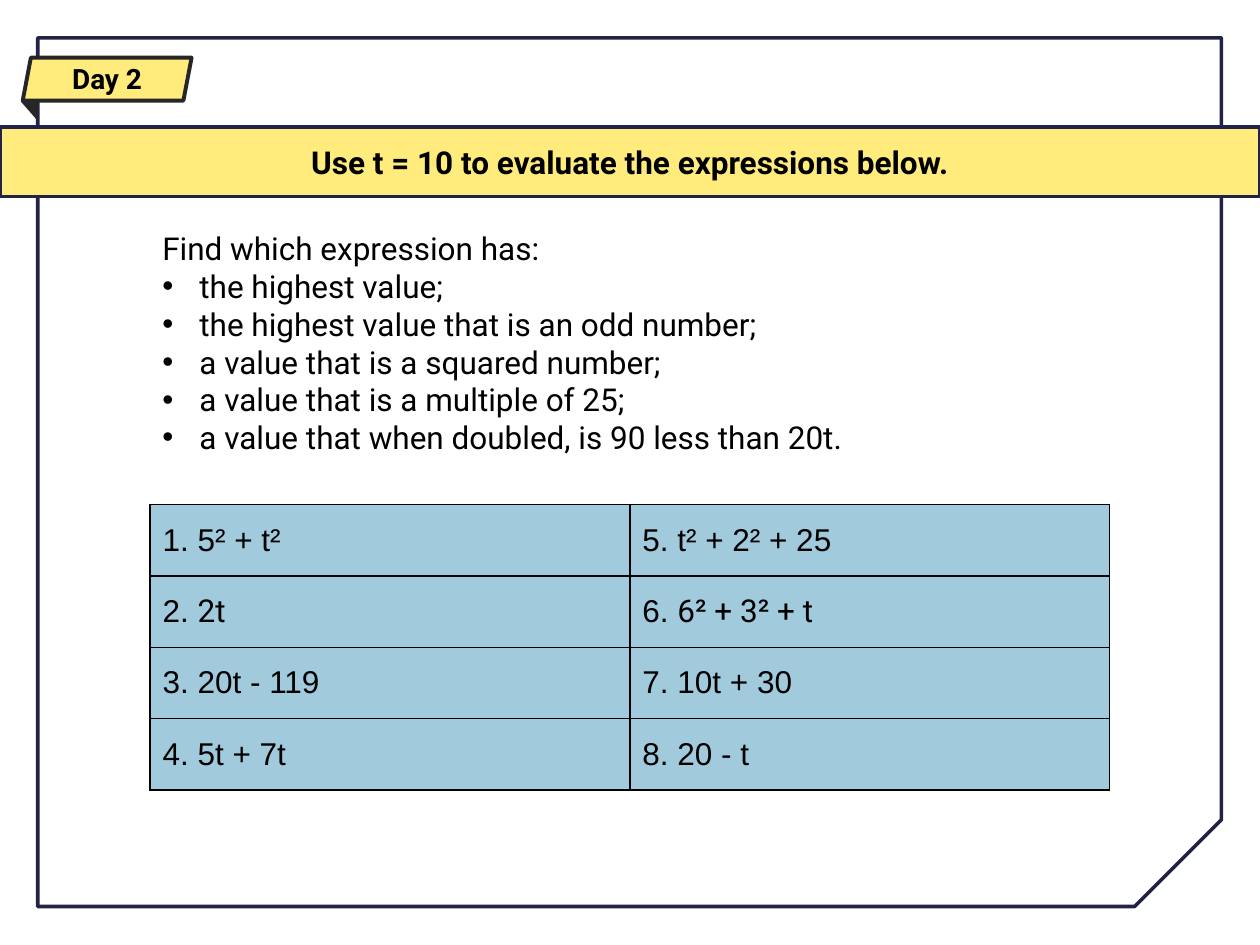
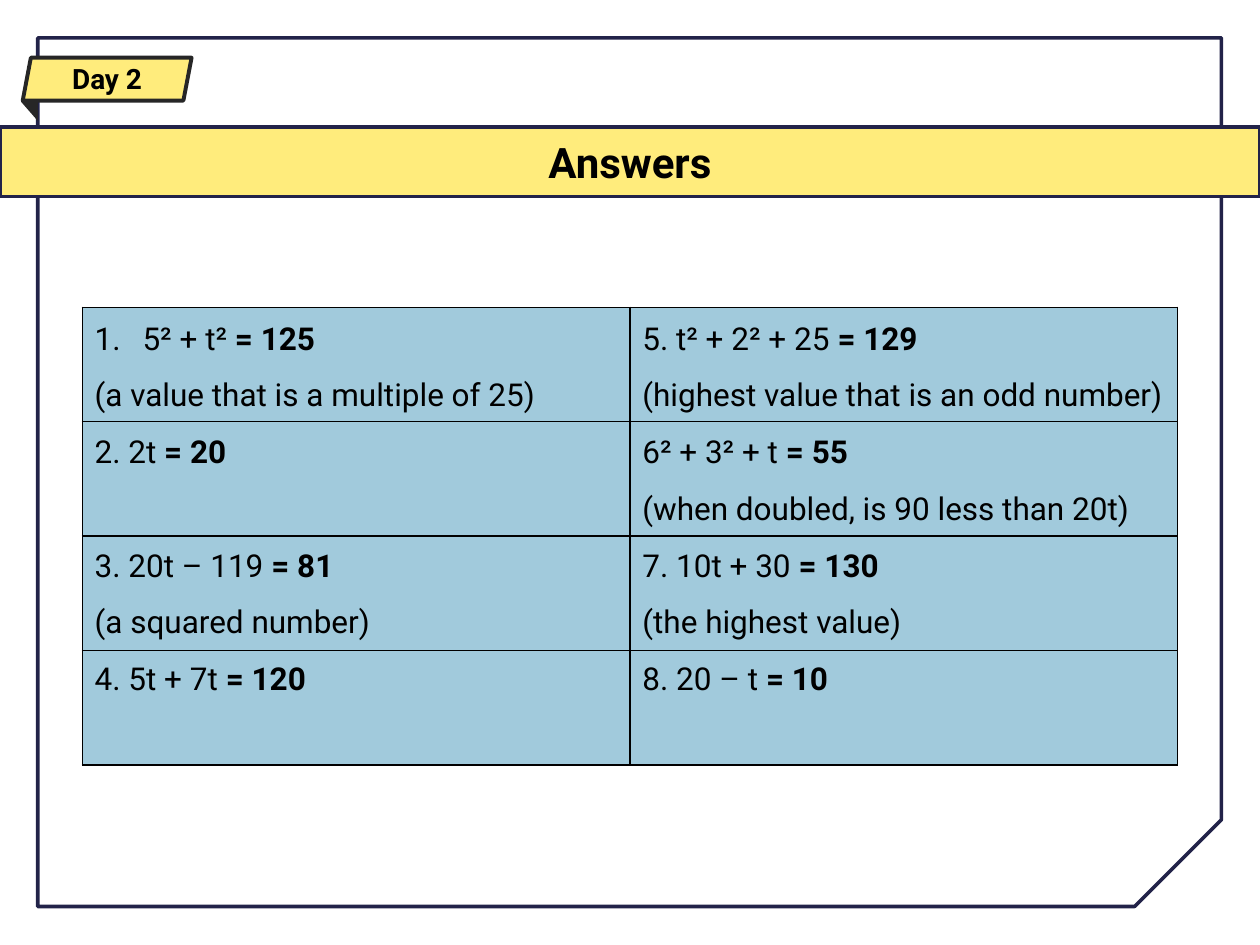
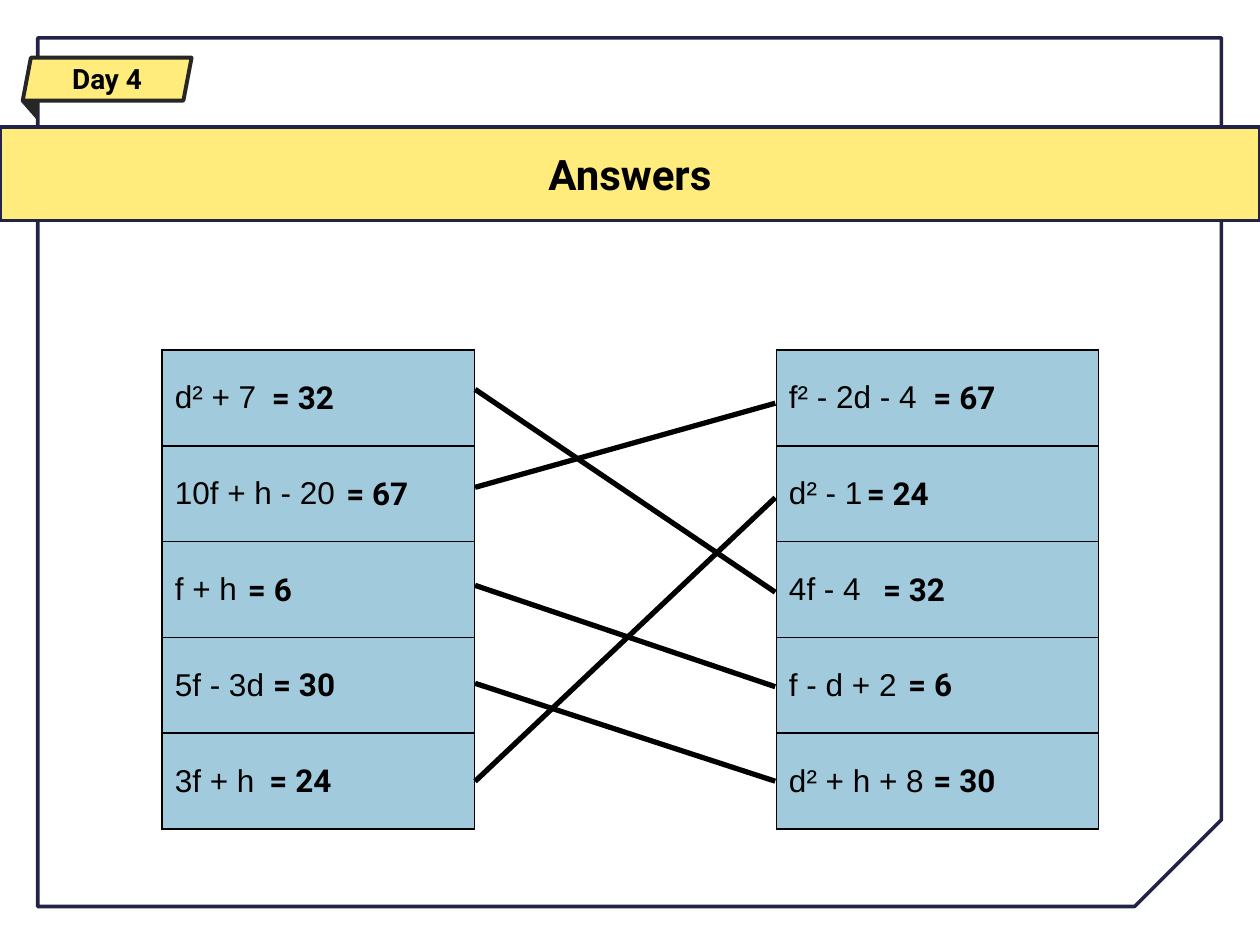
from lxml.etree import SubElement
from pptx import Presentation
from pptx.dml.color import RGBColor
from pptx.enum.shapes import MSO_CONNECTOR, MSO_SHAPE
from pptx.enum.text import MSO_ANCHOR, MSO_AUTO_SIZE, PP_ALIGN
from pptx.oxml.ns import qn
from pptx.util import Pt

# Shared look
BLACK, WHITE, NAVY, CHARCOAL = "000000", "FFFFFF", "222349", "262626"
YELLOW, BLUE = "FFEC7C", "A1CADC"
BODY_FONT, TABLE_FONT = "Roboto", "Arial"
PAGE_WIDTH, PAGE_HEIGHT = 720, 540
BAND_TOP = 72.7
ANSWER_LINE = 32.4

# Slide content
CLUES = [
    "the highest value;",
    "the highest value that is an odd number;",
    "a value that is a squared number;",
    "a value that is a multiple of 25;",
    "a value that when doubled, is 90 less than 20t.",
]
# Each cell is a list of (text, font) parts
EXPRESSIONS = [
    [[("1. 5² + t²", TABLE_FONT)], [("5. t² + 2² + 25", TABLE_FONT)]],
    [[("2. ", TABLE_FONT), ("2t", BODY_FONT)],
     [("6. ", TABLE_FONT), ("6² + 3² + t", BODY_FONT)]],
    [[("3. 20t - 119", TABLE_FONT)], [("7. 10t + 30", TABLE_FONT)]],
    [[("4. 5t + 7t", TABLE_FONT)], [("8. 20 - t", TABLE_FONT)]],
]
# Expression, result, remark
LEFT_ANSWERS = [
    ("5² + t² ", "= 125", "(a value that is a multiple of 25)"),
    ("2. 2t ", "= 20", None),
    ("3. 20t – 119 ", "= 81", "(a squared number)"),
    ("4. 5t + 7t ", "= 120", None),
]
RIGHT_ANSWERS = [
    ("5. t² + 2² + 25 ", "= 129", "(highest value that is an odd number)"),
    ("6² + 3² + t ", "= 55", "(when doubled, is 90 less than 20t)"),
    ("7. 10t + 30 ", "= 130", "(the highest value)"),
    ("8. 20 – t ", "= 10", None),
]
# Expression, value, left edge of the value
LEFT_MATCHES = [
    ("d² + 7", 32, 148.3), ("10f + h - 20", 67, 190.8), ("f + h", 6, 134.6),
    ("5f - 3d", 30, 149), ("3f + h", 24, 146.9),
]
RIGHT_MATCHES = [
    ("f² - 2d - 4", 67, 526.3), ("d² - 1", 24, 488.2), ("4f - 4", 32, 497.5),
    ("f - d + 2", 6, 511.9), ("d² + h + 8", 30, 526.3),
]


def color(hex_code):
    return RGBColor.from_string(hex_code)


def points(*lengths):
    return [Pt(length) for length in lengths]


# Text
def add_span(para, text, size=18, font=BODY_FONT, bold=False, hex_code=BLACK):
    span = para.add_run()
    span.text = text
    span.font.size = Pt(size)
    span.font.name = font
    span.font.bold = bold
    span.font.color.rgb = color(hex_code)
    return span


def add_box(page, *place):
    box = page.shapes.add_textbox(*points(*place))
    box.text_frame.word_wrap = True
    box.text_frame.auto_size = MSO_AUTO_SIZE.SHAPE_TO_FIT_TEXT
    return box.text_frame


def next_para(frame):
    first = frame.paragraphs[0]
    return frame.add_paragraph() if first.runs else first


def set_bullet(para, indent, tag, **attributes):
    properties = para._p.get_or_add_pPr()
    properties.set("marL", str(Pt(indent)))
    properties.set("indent", str(-Pt(indent)))
    SubElement(properties, qn("a:buFont")).set("typeface",
                                               TABLE_FONT if tag == "a:buChar" else BODY_FONT)
    SubElement(properties, qn(tag), attributes)


# Shapes and lines
def add_figure(shapes, kind, place, fill, line=None, width=2, adjust=()):
    figure = shapes.add_shape(kind, *points(*place))
    figure.shadow.inherit = False
    figure.fill.solid()
    figure.fill.fore_color.rgb = color(fill)
    if line:
        figure.line.color.rgb = color(line)
        figure.line.width = Pt(width)
    else:
        figure.line.fill.background()
    for index, value in enumerate(adjust):
        figure.adjustments[index] = value
    return figure


def add_line(page, *ends):
    line = page.shapes.add_connector(MSO_CONNECTOR.STRAIGHT, *points(*ends))
    line.line.color.rgb = color(BLACK)
    line.line.width = Pt(3)
    SubElement(line._element.spPr, qn("a:effectLst"))


# Tables
def style_cell(cell, fill, borders="LRTB"):
    properties = cell._tc.get_or_add_tcPr()
    for side in "LRTB":
        edge = SubElement(properties, qn(f"a:ln{side}"), w=str(Pt(1)))
        if side in borders:
            paint = SubElement(edge, qn("a:solidFill"))
            SubElement(paint, qn("a:srgbClr"), val=BLACK)
        else:
            SubElement(edge, qn("a:noFill"))
    cell.fill.solid()
    cell.fill.fore_color.rgb = color(fill)
    cell.vertical_anchor = MSO_ANCHOR.MIDDLE


def add_grid(page, left, top, widths, row_height, rows):
    """Draw rows of cells; a cell is a list of (text, font) or None for a gap."""
    place = points(left, top, sum(widths), row_height * len(rows))
    table = page.shapes.add_table(len(rows), len(widths), *place).table
    table.first_row = table.horz_banding = False
    for column, width in zip(table.columns, widths):
        column.width = Pt(width)
    for row_index, row in enumerate(rows):
        table.rows[row_index].height = Pt(row_height)
        for column_index, parts in enumerate(row):
            cell = table.cell(row_index, column_index)
            if parts is None:
                style_cell(cell, WHITE, borders="LR")
                continue
            style_cell(cell, BLUE)
            for text, font in parts:
                add_span(cell.text_frame.paragraphs[0], text, font=font)


# Frame, title band and day flag
def add_page(deck, day, title, title_size=24, band_height=39.6):
    page = deck.slides.add_slide(deck.slide_layouts[6])
    frame = add_figure(page.shapes, MSO_SHAPE.SNIP_ROUND_RECTANGLE,
                       (21.6, 21.6, 676.4, 496.4), WHITE, NAVY, adjust=(0, 0.1))
    frame.rotation = 180
    frame._element.spPr.find(qn("a:xfrm")).set("flipH", "1")

    band = add_figure(page.shapes, MSO_SHAPE.RECTANGLE,
                      (0, BAND_TOP, PAGE_WIDTH, band_height), YELLOW, NAVY)
    band.text_frame.vertical_anchor = MSO_ANCHOR.MIDDLE
    para = band.text_frame.paragraphs[0]
    para.alignment = PP_ALIGN.CENTER
    add_span(para, title, size=title_size, bold=True)

    flag = page.shapes.add_group_shape()
    add_figure(flag.shapes, MSO_SHAPE.PARALLELOGRAM, (13, 33, 96.5, 24.5),
               YELLOW, CHARCOAL, width=2.25, adjust=(0.19,))
    fold = add_figure(flag.shapes, MSO_SHAPE.RIGHT_TRIANGLE,
                      (12.2, 58.3, 9.4, 10.8), CHARCOAL)
    fold.rotation = 180
    para = add_box(page, 24.5, 31.7, 73.4, 26.6).paragraphs[0]
    para.alignment = PP_ALIGN.CENTER
    add_span(para, day, size=16, bold=True)
    return page


# Slide parts
def add_clues(page):
    frame = add_box(page, 85.7, 127.4, 528.5, 138.2)
    add_span(next_para(frame), "Find which expression has:")
    for clue in CLUES:
        para = next_para(frame)
        set_bullet(para, 21.2, "a:buChar", char="•")
        add_span(para, clue)


def add_answers(page, left, answers, numbered_first=False):
    frame = add_box(page, left, 167.8, 313, 269.3)
    remark = True
    for index, (expression, result, next_remark) in enumerate(answers):
        para = next_para(frame)
        if index == 0 and numbered_first:
            set_bullet(para, 27.4, "a:buAutoNum", type="arabicPeriod")
        para.line_spacing = 1.5
        if not remark:
            para.space_before = Pt(ANSWER_LINE)
        add_span(para, expression)
        add_span(para, result, bold=True)
        remark = next_remark
        if remark:
            para = next_para(frame)
            para.line_spacing = 1.5
            add_span(para, remark)


def add_matches(page):
    row_height = 54.75
    rows = [[[(left[0], TABLE_FONT)], None, [(right[0], TABLE_FONT)]]
            for left, right in zip(LEFT_MATCHES, RIGHT_MATCHES)]
    add_grid(page, 92.7, 200, (178.6, 172.4, 184), row_height, rows)
    for matches in (LEFT_MATCHES, RIGHT_MATCHES):
        for row, (_, value, left) in enumerate(matches):
            frame = add_box(page, left, 212.4 + row * row_height, 58.3, 29)
            add_span(frame.paragraphs[0], f"= {value}", bold=True)
    # Join the expressions with equal values
    right_rows = {value: row for row, (_, value, _) in enumerate(RIGHT_MATCHES)}
    for row, (_, value, _) in enumerate(LEFT_MATCHES):
        add_line(page, 271.5, 222.5 + 56 * row,
                 443, 230.4 + 54 * right_rows[value])


def main():
    deck = Presentation()
    deck.slide_width, deck.slide_height = points(PAGE_WIDTH, PAGE_HEIGHT)

    page = add_page(deck, "Day 2", "Use t = 10 to evaluate the expressions below.",
                    title_size=18)
    add_clues(page)
    add_grid(page, 85.7, 288.4, (274.2, 274.2), 40.75, EXPRESSIONS)

    page = add_page(deck, "Day 2", "Answers")
    add_grid(page, 47, 175.6, (313, 313), 65.4, [[[], []]] * 4)
    add_answers(page, 47, LEFT_ANSWERS, numbered_first=True)
    add_answers(page, 360, RIGHT_ANSWERS)

    page = add_page(deck, "Day 4", "Answers", band_height=53.3)
    add_matches(page)

    deck.save("out.pptx")


if __name__ == "__main__":
    main()
